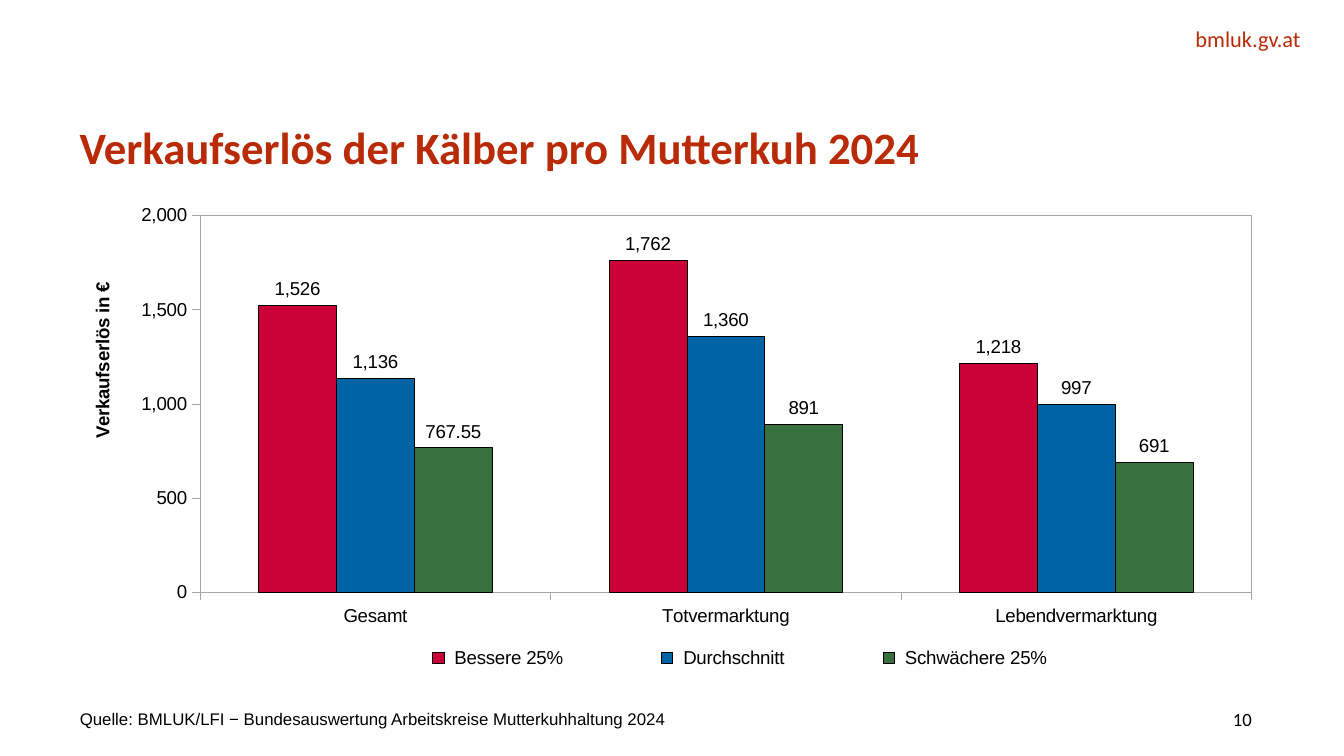
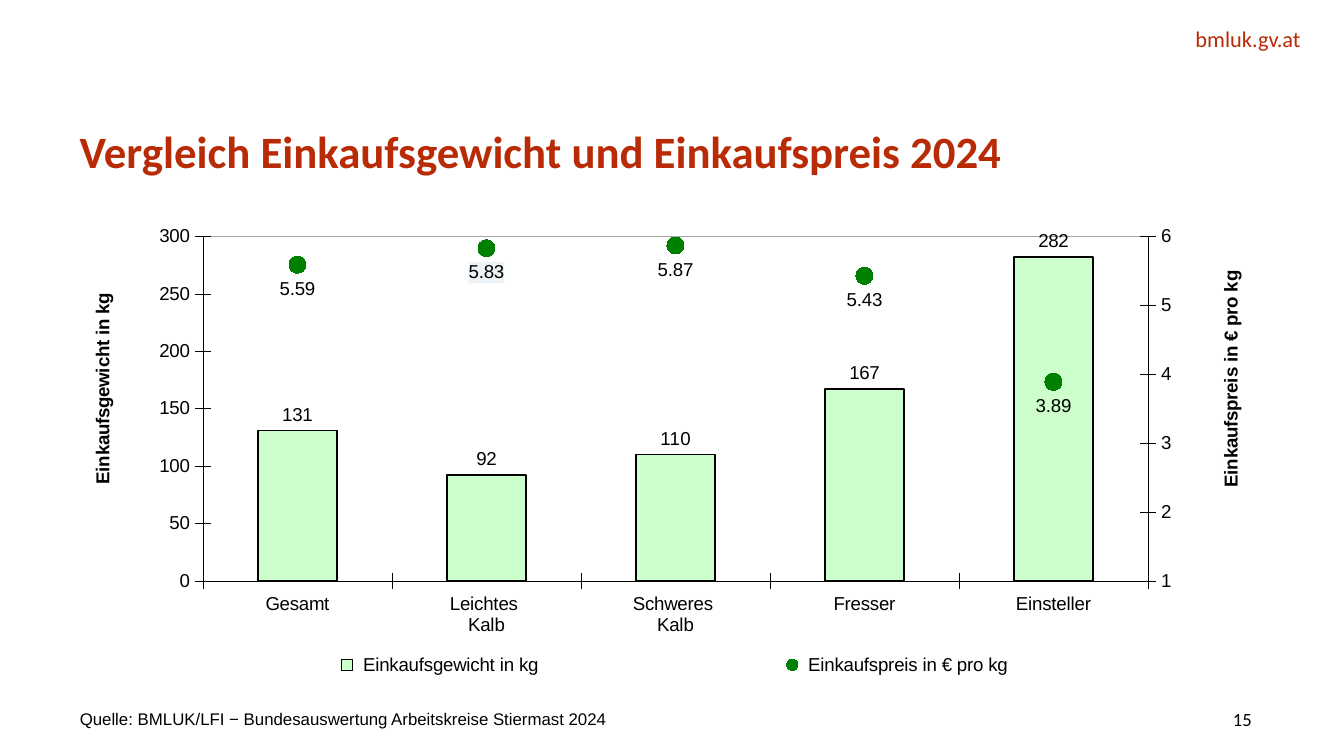
from copy import deepcopy

from lxml import etree
from pptx import Presentation
from pptx import util as u
from pptx.chart.axis import ValueAxis
from pptx.chart.data import CategoryChartData
from pptx.dml import color
from pptx.enum import chart as kinds
from pptx.enum import text
from pptx.oxml import ns

PX = 9525
RED, BLACK, GREY, WHITE = "B92B06", "000000", "A6A6A6", "FFFFFF"
LEFT, WIDTH, FOOT = 57, 838, 503
REVENUE_BOX = (LEFT, 139, 856, 348)
PURCHASE_BOX = (LEFT, 145, WIDTH, 343)
CROSS, OUT = kinds.XL_TICK_MARK.CROSS, kinds.XL_TICK_MARK.OUTSIDE
ABOVE, BELOW = kinds.XL_LABEL_POSITION.OUTSIDE_END, kinds.XL_LABEL_POSITION.BELOW


def rgb(value):
    return color.RGBColor.from_string(value)


def px(*values):
    return [u.Emu(value * PX) for value in values]


def set_font(font, size, name="Arial", fill=BLACK, bold=False):
    font.size, font.name, font.bold = u.Pt(size), name, bold
    font.color.rgb = rgb(fill)


def set_line(line, fill, width=0.25):
    line.color.rgb = rgb(fill)
    line.width = u.Pt(width)


def set_fill(fill, value):
    fill.solid()
    fill.fore_color.rgb = rgb(value)


def add_text(slide, box, words, size, name="Calibri", fill=BLACK, bold=False,
             align=text.PP_ALIGN.LEFT, anchor=text.MSO_ANCHOR.TOP, spacing=None):
    frame = slide.shapes.add_textbox(*px(*box)).text_frame
    frame.word_wrap = True
    frame.vertical_anchor = anchor
    frame.margin_left = frame.margin_right = frame.margin_top = frame.margin_bottom = 0
    paragraph = frame.paragraphs[0]
    paragraph.alignment = align
    if spacing:
        paragraph.line_spacing = u.Pt(spacing)
    run = paragraph.add_run()
    run.text = words
    set_font(run.font, size, name, fill, bold)


def add_slide(presentation, title, title_top, source, number):
    slide = presentation.slides.add_slide(presentation.slide_layouts[6])
    set_fill(slide.background.fill, WHITE)
    right, middle = text.PP_ALIGN.RIGHT, text.MSO_ANCHOR.MIDDLE
    add_text(slide, (698, 18, 231, 19), "bmluk.gv.at", 12, fill=RED, align=right)
    add_text(slide, (LEFT, title_top, WIDTH, 65), title, 24, fill=RED, bold=True, spacing=30)
    add_text(slide, (LEFT, FOOT, 722, 21),
             f"Quelle: BMLUK/LFI − Bundesauswertung Arbeitskreise {source} 2024",
             9, "Arial", anchor=middle)
    add_text(slide, (809, FOOT, 85, 21), number, 10, align=right, anchor=middle)
    return slide


def add_child(parent, tag, **attributes):
    return etree.SubElement(parent, ns.qn(tag), **attributes)


def set_layout(parent, chart_box, box, inner=False):
    for old in parent.findall(ns.qn("c:layout")):
        parent.remove(old)
    layout = etree.Element(ns.qn("c:layout"))
    manual = add_child(layout, "c:manualLayout")
    if inner:
        add_child(manual, "c:layoutTarget", val="inner")
    for tag in ("c:xMode", "c:yMode"):
        add_child(manual, tag, val="edge")
    for tag, value, whole in zip("xywh", box, chart_box[2:] * 2):
        add_child(manual, f"c:{tag}", val=str(value / whole))
    overlay = parent.find(ns.qn("c:overlay"))
    parent.insert(0 if overlay is None else parent.index(overlay), layout)


def frame_plot(chart, chart_box, box):
    plot_area = chart.element.xpath("c:chart/c:plotArea")[0]
    set_layout(plot_area, chart_box, box, inner=True)
    outline = add_child(add_child(plot_area, "c:spPr"), "a:ln", w="3175")
    add_child(add_child(outline, "a:solidFill"), "a:srgbClr", val=GREY)


def style_axis(axis, tick, line):
    axis.has_major_gridlines = False
    axis.major_tick_mark = tick
    axis.minor_tick_mark = kinds.XL_TICK_MARK.NONE
    set_line(axis.format.line, line)
    set_font(axis.tick_labels.font, 10)


def style_value_axis(axis, tick, line, title, chart_box, place, scale, number_format):
    style_axis(axis, tick, line)
    axis.minimum_scale, axis.maximum_scale, axis.major_unit = scale
    axis.tick_labels.number_format = number_format
    axis.tick_labels.number_format_is_linked = False
    run = axis.axis_title.text_frame.paragraphs[0].add_run()
    run.text = title
    set_font(run.font, 10, bold=True)
    element = axis.axis_title.element
    body = element.xpath(".//a:bodyPr")[0]
    body.set("rot", "-5400000")
    body.set("vert", "horz")
    set_layout(element, chart_box, place)


def add_legend(chart, position, chart_box, box, overlay):
    chart.has_legend = True
    chart.legend.position = position
    chart.legend.include_in_layout = overlay
    set_font(chart.legend.font, 10)
    set_layout(chart.element.xpath("c:chart/c:legend")[0], chart_box, box)


def label_series(series, position, number_format):
    labels = series.data_labels
    labels.show_value = True
    labels.position = position
    labels.number_format = number_format
    labels.number_format_is_linked = False
    set_font(labels.font, 10)


def style_bars(series, fill, width, number_format):
    set_fill(series.format.fill, fill)
    set_line(series.format.line, BLACK, width)
    label_series(series, ABOVE, number_format)


def add_columns(slide, box, categories, series, gap):
    data = CategoryChartData()
    data.categories = categories
    for name, values in series:
        data.add_series(f" {name}", values)
    chart = slide.shapes.add_chart(kinds.XL_CHART_TYPE.COLUMN_CLUSTERED, *px(*box), data).chart
    chart.has_title = False
    set_font(chart.font, 10)
    plot = chart.plots[0]
    plot.vary_by_categories = False
    plot.gap_width, plot.overlap = gap, 0
    return chart


def split_axes(chart):
    plot_area = chart.element.xpath("c:chart/c:plotArea")[0]
    bars = plot_area.find(ns.qn("c:barChart"))
    moved = bars.findall(ns.qn("c:ser"))[-1]
    for unused in moved.findall(ns.qn("c:invertIfNegative")):
        moved.remove(unused)
    lines = etree.Element(ns.qn("c:lineChart"))
    add_child(lines, "c:grouping", val="standard")
    add_child(lines, "c:varyColors", val="0")
    lines.append(moved)
    add_child(lines, "c:marker", val="1")
    bars.addnext(lines)
    category, left = (plot_area.find(ns.qn(tag)) for tag in ("c:catAx", "c:valAx"))
    hidden, right = deepcopy(category), deepcopy(left)
    left.addnext(right)
    right.addnext(hidden)
    for axis, own, other in ((hidden, "501", "502"), (right, "502", "501")):
        axis.find(ns.qn("c:axId")).set("val", own)
        axis.find(ns.qn("c:crossAx")).set("val", other)
        add_child(lines, "c:axId", val=own)
    hidden.find(ns.qn("c:delete")).set("val", "1")
    right.find(ns.qn("c:axPos")).set("val", "r")
    right.find(ns.qn("c:crosses")).set("val", "max")
    return ValueAxis(left), ValueAxis(right)


def shade_label(chart, series, index, fill):
    label = series.points[index].data_label
    set_font(label.font, 10)
    label.position = BELOW
    element = chart.element.xpath(f".//c:lineChart//c:dLbl[c:idx/@val='{index}']")[0]
    for old in element.findall(ns.qn("c:spPr")):
        element.remove(old)
    shape = etree.Element(ns.qn("c:spPr"))
    add_child(add_child(shape, "a:solidFill"), "a:srgbClr", val=fill)
    element.find(ns.qn("c:idx")).addnext(shape)


def add_revenue_chart(slide):
    box = REVENUE_BOX
    chart = add_columns(slide, box, ["Gesamt", "Totvermarktung", "Lebendvermarktung"],
                        [("Bessere 25%", (1526, 1762, 1218)),
                         ("Durchschnitt", (1136, 1360, 997)),
                         ("Schwächere 25%", (767.55, 891, 691))], 150)
    style_axis(chart.category_axis, OUT, GREY)
    style_value_axis(chart.value_axis, OUT, GREY, "Verkaufserlös in €", box, (5, 60),
                     (0, 2000, 500), "#,##0")
    styles = (("CA0237", "#,##0"), ("0063A3", "#,##0"), ("38713F", "General"))
    for series, (fill, number_format) in zip(chart.plots[0].series, styles):
        style_bars(series, fill, 0.25, number_format)
    add_legend(chart, kinds.XL_LEGEND_POSITION.BOTTOM, box, (186, 317, 571, 28), False)
    frame_plot(chart, box, (86, 15, 751, 269))


def add_purchase_chart(slide):
    box = PURCHASE_BOX
    weight, price = "Einkaufsgewicht in kg", "Einkaufspreis in € pro kg"
    chart = add_columns(slide, box,
                        ["Gesamt", "Leichtes \nKalb", "Schweres \nKalb", "Fresser", "Einsteller"],
                        [(weight, (131, 92, 110, 167, 282)),
                         (price, (5.59, 5.83, 5.87, 5.43, 3.89))], 140)
    weight_axis, price_axis = split_axes(chart)
    style_axis(chart.category_axis, CROSS, BLACK)
    style_value_axis(weight_axis, CROSS, BLACK, weight, box, (5, 62), (0, 300, 50), "0")
    style_value_axis(price_axis, CROSS, BLACK, price, box, (811, 46), (1, 6, 1), "0")
    columns, dots = (plot.series[0] for plot in chart.plots)
    style_bars(columns, "CCFFCC", 1, "0")
    dots.smooth = False
    dots.format.line.fill.background()
    dots.marker.style, dots.marker.size = kinds.XL_MARKER_STYLE.CIRCLE, 9
    set_fill(dots.marker.format.fill, "008000")
    set_line(dots.marker.format.line, "008000")
    label_series(dots, BELOW, "0.00")
    shade_label(chart, dots, 1, "EDF3F7")
    add_legend(chart, kinds.XL_LEGEND_POSITION.RIGHT, box, (14, 317, 822, 26), True)
    frame_plot(chart, box, (88, 24, 675, 246))


def main():
    presentation = Presentation()
    presentation.slide_width, presentation.slide_height = px(960, 540)
    add_revenue_chart(add_slide(presentation, "Verkaufserlös der Kälber pro Mutterkuh 2024",
                                84, "Mutterkuhhaltung", "10"))
    add_purchase_chart(add_slide(presentation, "Vergleich Einkaufsgewicht und Einkaufspreis 2024",
                                 87, "Stiermast", "15"))
    presentation.save("out.pptx")


if __name__ == "__main__":
    main()
